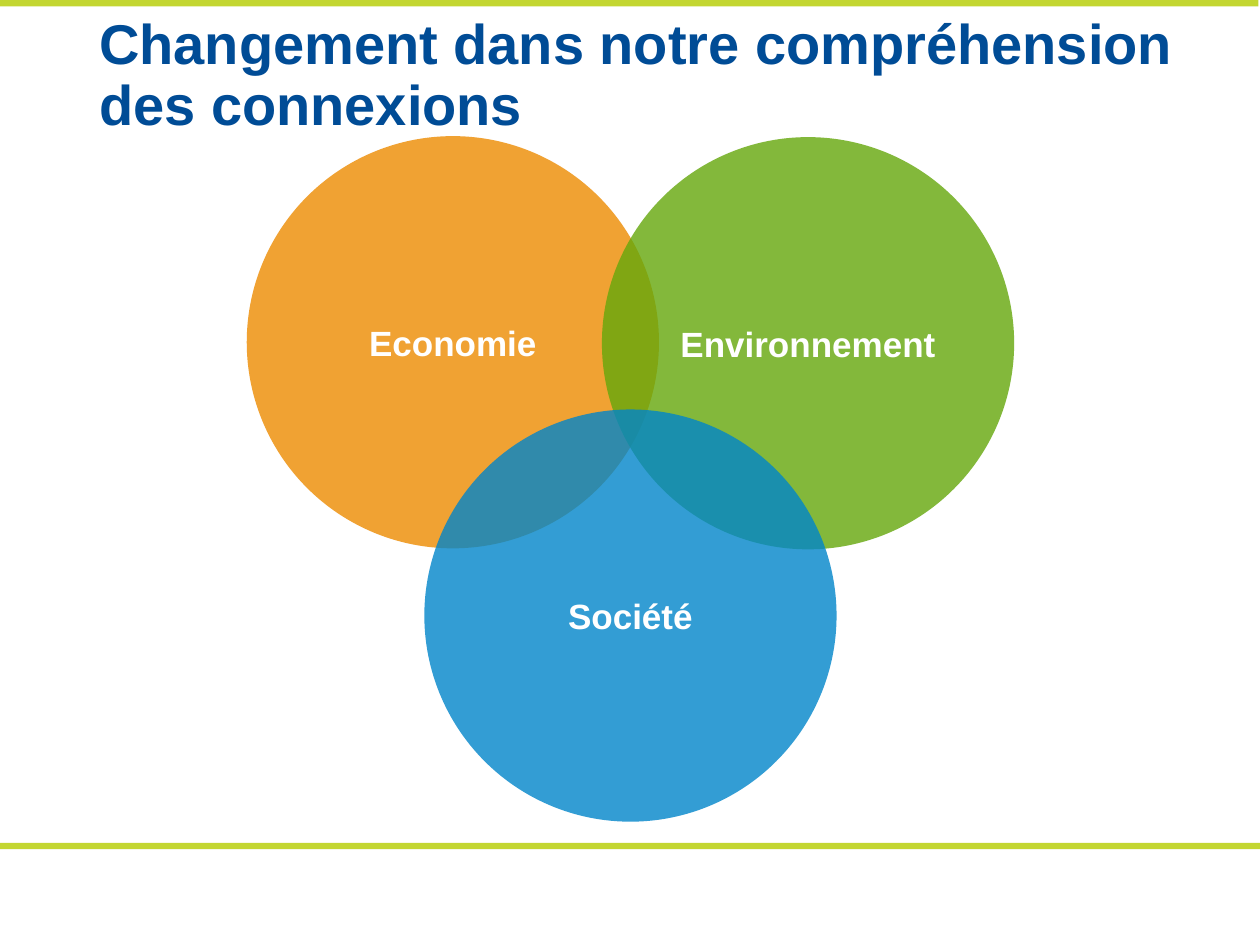
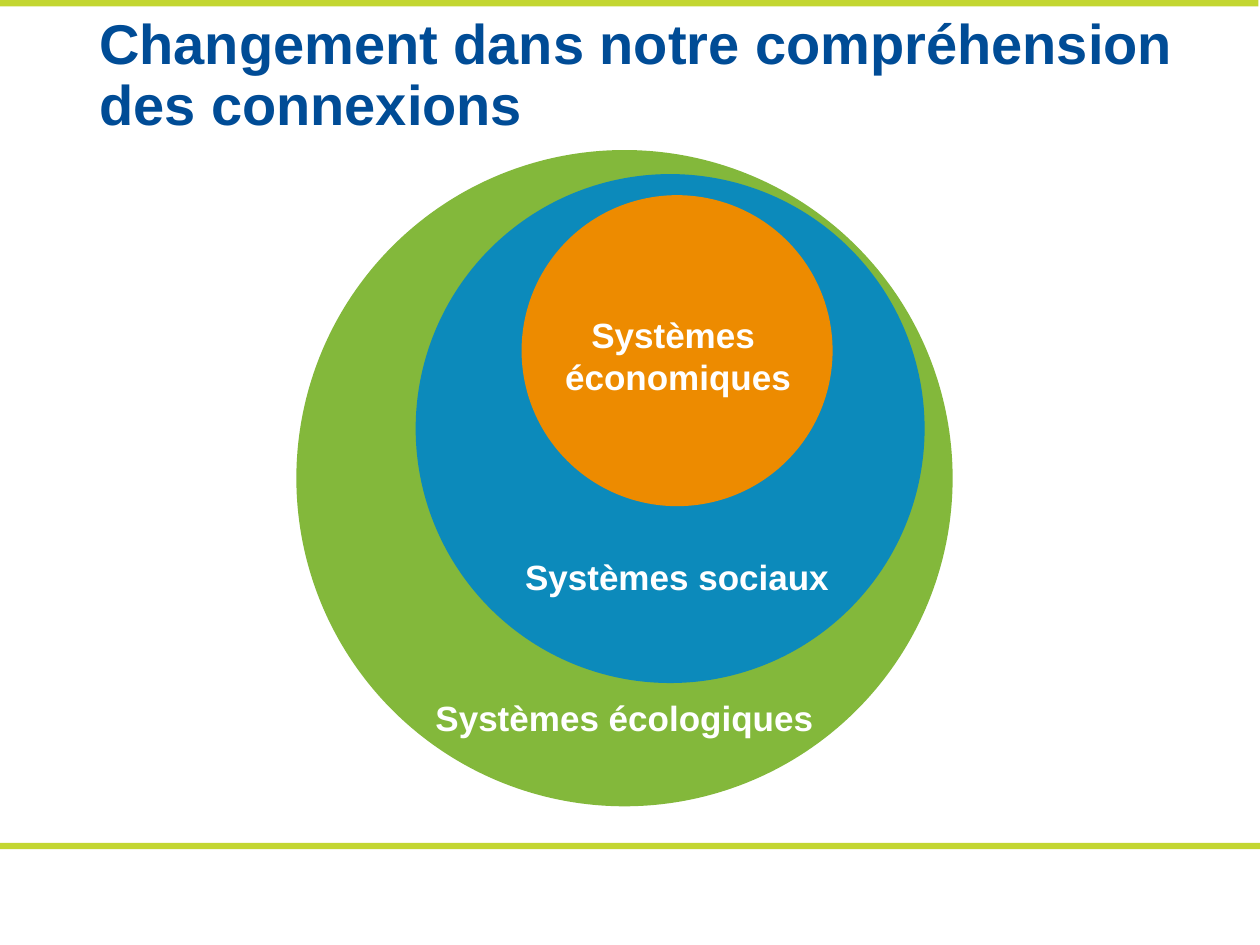
from dataclasses import dataclass

from lxml import etree
from pptx import Presentation
from pptx.dml.color import RGBColor
from pptx.enum.shapes import MSO_SHAPE
from pptx.enum.text import MSO_ANCHOR, MSO_AUTO_SIZE, PP_ALIGN
from pptx.oxml.ns import qn
from pptx.util import Cm, Pt

OVAL, RECTANGLE = MSO_SHAPE.OVAL, MSO_SHAPE.RECTANGLE
TOP, MIDDLE = MSO_ANCHOR.TOP, MSO_ANCHOR.MIDDLE
LEFT, CENTER = PP_ALIGN.LEFT, PP_ALIGN.CENTER
GROW = MSO_AUTO_SIZE.SHAPE_TO_FIT_TEXT


@dataclass(frozen=True)
class Theme:
    font: str = "Arial"
    title_size: int = 32
    label_size: int = 20
    title: str = "004C96"
    label: str = "FFFFFF"
    band: str = "C3D631"
    economy: str = "ED8B00"
    environment: str = "64A70B"
    society: str = "0085CA"


THEME = Theme()

# Content (lengths in centimetres)
TITLE = "Changement dans notre compréhension des connexions"
SLIDE_WIDTH, SLIDE_HEIGHT = 25.4, 19.05
TITLE_AREA = (1.75, 0.08, 23.04, 2.95)
BAND_HEIGHT = 0.13
BAND_CORNERS = [(0, 16.99), (-0.03, 0)]

# Overlapping circles: label, colour, steps from the middle, centre height
VENN_MIDDLE, VENN_STEP, VENN_DIAMETER, VENN_OPACITY = 12.71, 3.58, 8.31, 80
VENN = [
    ("Economie", THEME.economy, -1, 6.9),
    ("Environnement", THEME.environment, 1, 6.92),
    ("Société", THEME.society, 0, 12.41),
]

# Nested circles: colour, opacity, centre x, centre y, diameter
NESTED = [
    (THEME.environment, 80, 12.59, 9.64, 13.23),
    (THEME.society, 90, 13.51, 8.64, 10.26),
    (THEME.economy, 100, 13.65, 7.07, 6.27),
]
# Labels: lines, centre x, top, width, height, wrap
NESTED_LABELS = [
    (["Systèmes écologiques"], 12.59, 13.92, 8.2, 1.12, False),
    (["Systèmes sociaux"], 13.65, 11.07, 6.68, 1.12, False),
    (["Systèmes ", "économiques"], 13.67, 6.2, 5.74, 1.96, True),
]


def write(shape, lines, size, color, align, anchor, wrap=True, spacing=None):
    frame = shape.text_frame
    frame.word_wrap = wrap
    frame.vertical_anchor = anchor
    for index, line in enumerate(lines):
        para = frame.add_paragraph() if index else frame.paragraphs[0]
        para.alignment = align
        if spacing:
            para.line_spacing = spacing
        span = para.add_run()
        span.text = line
        span.font.name = THEME.font
        span.font.size = Pt(size)
        span.font.bold = True
        span.font.color.rgb = RGBColor.from_string(color)


def add_filled(page, kind, area, color, opacity=100):
    shape = page.shapes.add_shape(kind, *map(Cm, area))
    shape.shadow.inherit = False
    shape.line.fill.background()
    shape.fill.solid()
    shape.fill.fore_color.rgb = RGBColor.from_string(color)
    if opacity < 100:
        tint = shape.fill._xPr.find(".//" + qn("a:srgbClr"))
        etree.SubElement(tint, qn("a:alpha")).set("val", str(opacity * 1000))
    return shape


def add_circle(page, x, y, diameter, color, opacity):
    area = (x - diameter / 2, y - diameter / 2, diameter, diameter)
    return add_filled(page, OVAL, area, color, opacity)


def add_page(deck):
    page = deck.slides.add_slide(deck.slide_layouts[6])
    for left, top in BAND_CORNERS:
        add_filled(page, RECTANGLE, (left, top, SLIDE_WIDTH, BAND_HEIGHT), THEME.band)
    box = page.shapes.add_textbox(*map(Cm, TITLE_AREA))
    write(box, [TITLE], THEME.title_size, THEME.title, LEFT, MIDDLE, spacing=0.9)
    return page


def build_venn(page):
    for label, color, step, y in VENN:
        x = VENN_MIDDLE + step * VENN_STEP
        circle = add_circle(page, x, y, VENN_DIAMETER, color, VENN_OPACITY)
        write(circle, [label], THEME.label_size, THEME.label, CENTER, MIDDLE)


def build_nested(page):
    for color, opacity, x, y, diameter in NESTED:
        add_circle(page, x, y, diameter, color, opacity)
    for lines, x, top, width, height, wrap in NESTED_LABELS:
        area = (x - width / 2, top, width, height)
        box = page.shapes.add_textbox(*map(Cm, area))
        write(box, lines, THEME.label_size, THEME.label, CENTER, TOP, wrap)
        box.text_frame.auto_size = GROW


def main():
    deck = Presentation()
    deck.slide_width, deck.slide_height = Cm(SLIDE_WIDTH), Cm(SLIDE_HEIGHT)
    for build in (build_venn, build_nested):
        build(add_page(deck))
    deck.save("out.pptx")


if __name__ == "__main__":
    main()
